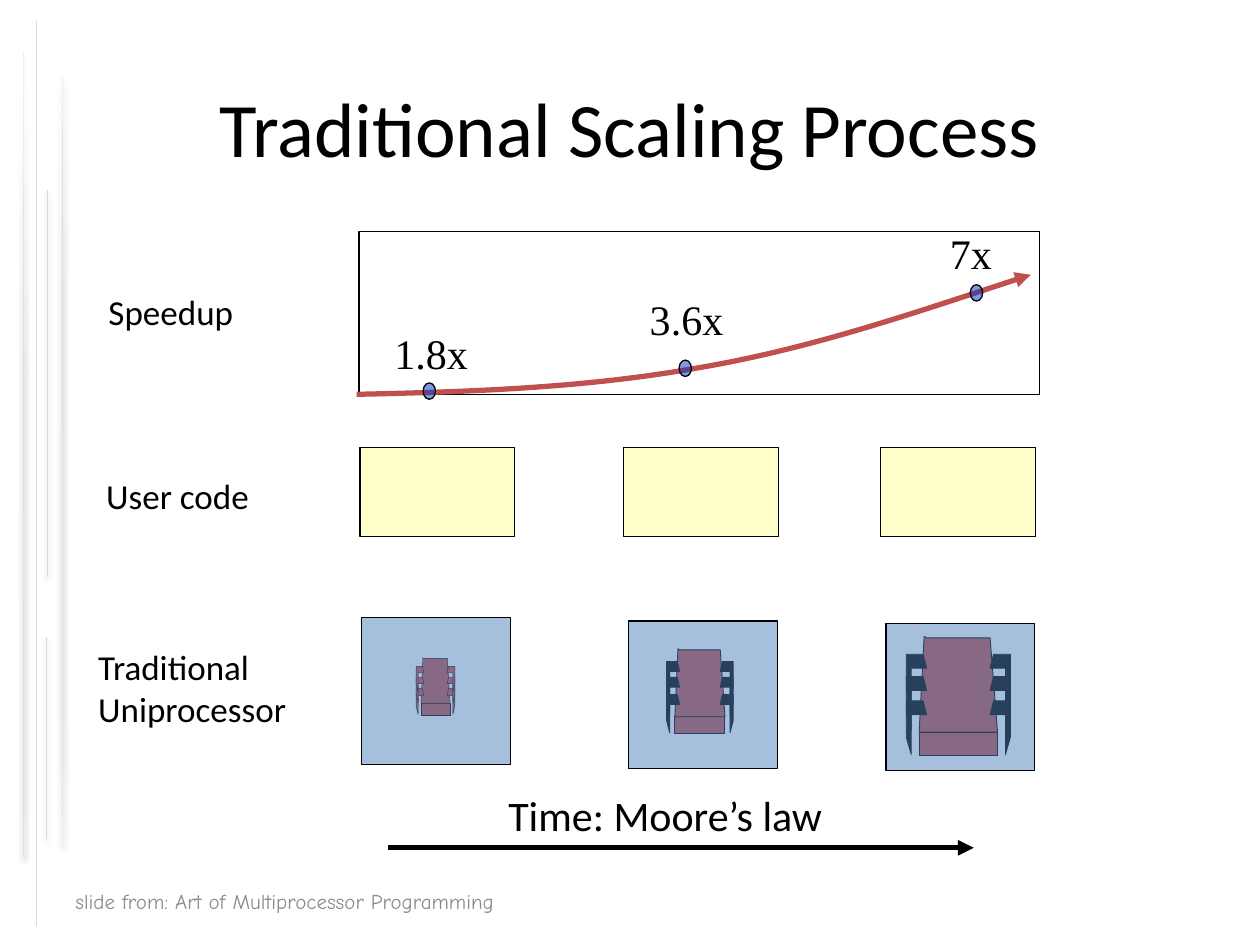
from typing import NamedTuple

from lxml import etree
from pptx import Presentation
from pptx import util as u
from pptx.dml.color import RGBColor
from pptx.enum import shapes, text
from pptx.oxml import ns

BLACK = RGBColor(0x00, 0x00, 0x00)
WHITE = RGBColor(0xFF, 0xFF, 0xFF)
RAIL_GRAY = RGBColor(0xD9, 0xD9, 0xD9)
FOOTER_GRAY = RGBColor(0x8C, 0x8C, 0x8C)
CODE_YELLOW = RGBColor(0xFF, 0xFF, 0xCC)
CURVE_RED = RGBColor(0xC0, 0x50, 0x4D)
DOT_BLUE = RGBColor(0x00, 0x33, 0xCC)
CHIP_BLUE = RGBColor(0x4F, 0x81, 0xBD)

RECTANGLE = shapes.MSO_SHAPE.RECTANGLE
OVAL = shapes.MSO_SHAPE.OVAL
CENTER = text.PP_ALIGN.CENTER
LEFT = text.PP_ALIGN.LEFT


class Box(NamedTuple):
    left: float
    top: float
    width: float
    height: float


class Label(NamedTuple):
    lines: tuple[str, ...]
    box: Box
    size: float
    font: str = "Calibri"
    color: RGBColor = BLACK
    align: text.PP_ALIGN = CENTER
    wrap: bool = False
    middle: bool = False


class Line(NamedTuple):
    x1: float
    y1: float
    x2: float
    y2: float


class Bug(NamedTuple):
    center: float
    top: float
    scale_x: float
    scale_y: float
    leg_color: RGBColor
    weight: float


LABELS = (
    Label(("Traditional Scaling Process",), Box(1.9, 0.97, 21.59, 3.18), 44, wrap=True, middle=True),
    Label(("slide from: Art of Multiprocessor Programming",), Box(1.27, 17.65, 10.67, 1.02), 12,
          "Comic Neue", FOOTER_GRAY, LEFT, True, True),
    Label(("Speedup",), Box(1.78, 5.74, 3.33, 1.09), 20),
    Label(("User code",), Box(1.65, 9.45, 3.86, 1.09), 20),
    Label(("Traditional", "Uniprocessor"), Box(1.73, 12.88, 5.11, 1.96), 20, align=LEFT, wrap=True),
    Label(("1.8x",), Box(7.49, 6.48, 2.4, 1.27), 24, "Times New Roman"),
    Label(("3.6x",), Box(12.64, 5.79, 2.4, 1.27), 24, "Times New Roman"),
    Label(("7x",), Box(18.67, 4.47, 1.8, 1.27), 24, "Times New Roman"),
    Label(("Time: Moore’s law",), Box(9.42, 15.8, 7.98, 1.27), 24),
)
RAILS = (
    Line(1.26, 1.57, 1.25, 17.04),
    Line(0.48, 1.04, 0.47, 17.27),
    Line(0.95, 3.84, 0.95, 11.63),
    Line(0.74, 0.43, 0.74, 18.67),
    Line(0.94, 12.85, 0.94, 16.92),
)
CURVE = ((7.19, 7.95), (9.5, 7.9), (11.79, 7.82), (14.05, 7.42),
         (16.31, 7.04), (18.54, 6.27), (20.78, 5.54))
DOTS = ((8.53, 7.72), (13.69, 7.26), (19.56, 5.74))
CODE_LEFTS = (7.26, 12.57, 17.75)
CHIPS = ((7.29, 12.45), (12.67, 12.52), (17.86, 12.57))
BUGS = (
    Bug(8.78, 13.26, 0.37, 0.48, CURVE_RED, 0.25),
    Bug(14.11, 13.08, 0.64, 0.71, BLACK, 0.5),
    Bug(19.32, 12.83, 1, 1, BLACK, 0.5),
)
BUG_BODY = ((-0.64, 0.03), (0.64, 0.03), (0.79, 1.93), (-0.79, 1.93), (-0.69, 0))
BUG_BASE = Box(-0.79, 1.93, 1.58, 0.48)
BUG_LEG = ((0.71, 0), (1.05, 0), (1.05, 0.73), (0.95, 1.08), (0.95, 0.28), (0.64, 0.28))
LEG_TOPS = (1.3, 0.81, 0.36)


def add_xml(parent, tag: str, **attributes: str):
    return etree.SubElement(parent, ns.qn(tag), attributes)


def style(shape, fill: RGBColor, weight: float = 0.75, opacity: int = 100) -> None:
    shape.shadow.inherit = False
    shape.fill.solid()
    shape.fill.fore_color.rgb = fill
    if opacity < 100:
        color = shape.fill._xPr.find(".//" + ns.qn("a:srgbClr"))
        add_xml(color, "a:alpha", val=str(opacity * 1000))
    shape.line.color.rgb = BLACK
    shape.line.width = u.Pt(weight)


def add_preset(parent, kind: shapes.MSO_SHAPE, box: Box, fill: RGBColor,
               weight: float = 0.75, opacity: int = 100) -> None:
    shape = parent.add_shape(kind, *map(u.Cm, box))
    style(shape, fill, weight, opacity)


def add_outline(parent, points, close: bool = True):
    start, *rest = [(u.Cm(x), u.Cm(y)) for x, y in points]
    builder = parent.build_freeform(*start, scale=1.0)
    builder.add_line_segments(rest, close=close)
    return builder.convert_to_shape()


def add_line(parent, line: Line, color: RGBColor, weight: float):
    connector = parent.add_connector(shapes.MSO_CONNECTOR.STRAIGHT, *map(u.Cm, line))
    connector.line.color.rgb = color
    connector.line.width = u.Pt(weight)
    return connector, add_xml(connector._element.spPr, "a:effectLst")


def add_arrowhead(shape) -> None:
    add_xml(shape.line._get_or_add_ln(), "a:tailEnd", type="triangle")


def add_rail(parent, line: Line) -> None:
    _, effects = add_line(parent, line, RAIL_GRAY, 0.25)
    shadow = add_xml(effects, "a:outerShdw", blurRad="40000", dist="20000",
                     dir="5400000", rotWithShape="0")
    add_xml(add_xml(shadow, "a:srgbClr", val="000000"), "a:alpha", val="38000")


def add_curve(parent) -> None:
    curve = add_outline(parent, CURVE, close=False)
    curve.shadow.inherit = False
    curve.fill.background()
    curve.line.color.rgb = CURVE_RED
    curve.line.width = u.Pt(3)
    add_arrowhead(curve)
    segments = list(curve._element.iter(ns.qn("a:lnTo")))
    for first in range(0, len(segments), 3):
        bezier = add_xml(segments[first].getparent(), "a:cubicBezTo")
        for segment in segments[first:first + 3]:
            bezier.append(segment[0])
            segment.getparent().remove(segment)


def add_bug(parent, bug: Bug) -> None:
    group = parent.add_group_shape().shapes

    def place(points):
        return [(bug.center + x * bug.scale_x, bug.top + y * bug.scale_y) for x, y in points]

    ((left, top),) = place([BUG_BASE[:2]])
    base = Box(left, top, BUG_BASE.width * bug.scale_x, BUG_BASE.height * bug.scale_y)
    add_preset(group, RECTANGLE, base, CURVE_RED, bug.weight)
    style(add_outline(group, place(BUG_BODY)), CURVE_RED, bug.weight)
    for side in (1, -1):
        for leg_top in LEG_TOPS:
            leg = place([(side * x, leg_top + y) for x, y in BUG_LEG])
            style(add_outline(group, leg), bug.leg_color, bug.weight)


def add_label(parent, label: Label) -> None:
    frame = parent.add_textbox(*map(u.Cm, label.box)).text_frame
    frame.word_wrap = label.wrap
    if label.middle:
        frame.vertical_anchor = text.MSO_ANCHOR.MIDDLE
    else:
        frame.auto_size = text.MSO_AUTO_SIZE.SHAPE_TO_FIT_TEXT
    for index, words in enumerate(label.lines):
        paragraph = frame.add_paragraph() if index else frame.paragraphs[0]
        paragraph.alignment = label.align
        run = paragraph.add_run()
        run.text = words
        run.font.size = u.Pt(label.size)
        run.font.name = label.font
        run.font.color.rgb = label.color


def main() -> None:
    presentation = Presentation()
    presentation.slide_width, presentation.slide_height = u.Cm(25.4), u.Cm(19.05)
    slide = presentation.slides.add_slide(presentation.slide_layouts[6])
    canvas = slide.shapes
    for rail in RAILS:
        add_rail(canvas, rail)
    for left in CODE_LEFTS:
        add_preset(canvas, RECTANGLE, Box(left, 9.02, 3.12, 1.8), CODE_YELLOW)
    add_preset(canvas, RECTANGLE, Box(7.24, 4.67, 13.72, 3.28), WHITE, opacity=50)
    add_curve(canvas)
    for left, top in DOTS:
        add_preset(canvas, OVAL, Box(left, top, 0.25, 0.33), DOT_BLUE, opacity=50)
    for label in LABELS:
        add_label(canvas, label)
    time_arrow, _ = add_line(canvas, Line(7.82, 17.09, 19.63, 17.09), BLACK, 3)
    add_arrowhead(time_arrow)
    for bug in BUGS:
        add_bug(canvas, bug)
    for left, top in CHIPS:
        add_preset(canvas, RECTANGLE, Box(left, top, 3, 2.97), CHIP_BLUE, opacity=50)
    presentation.save("out.pptx")


if __name__ == "__main__":
    main()
